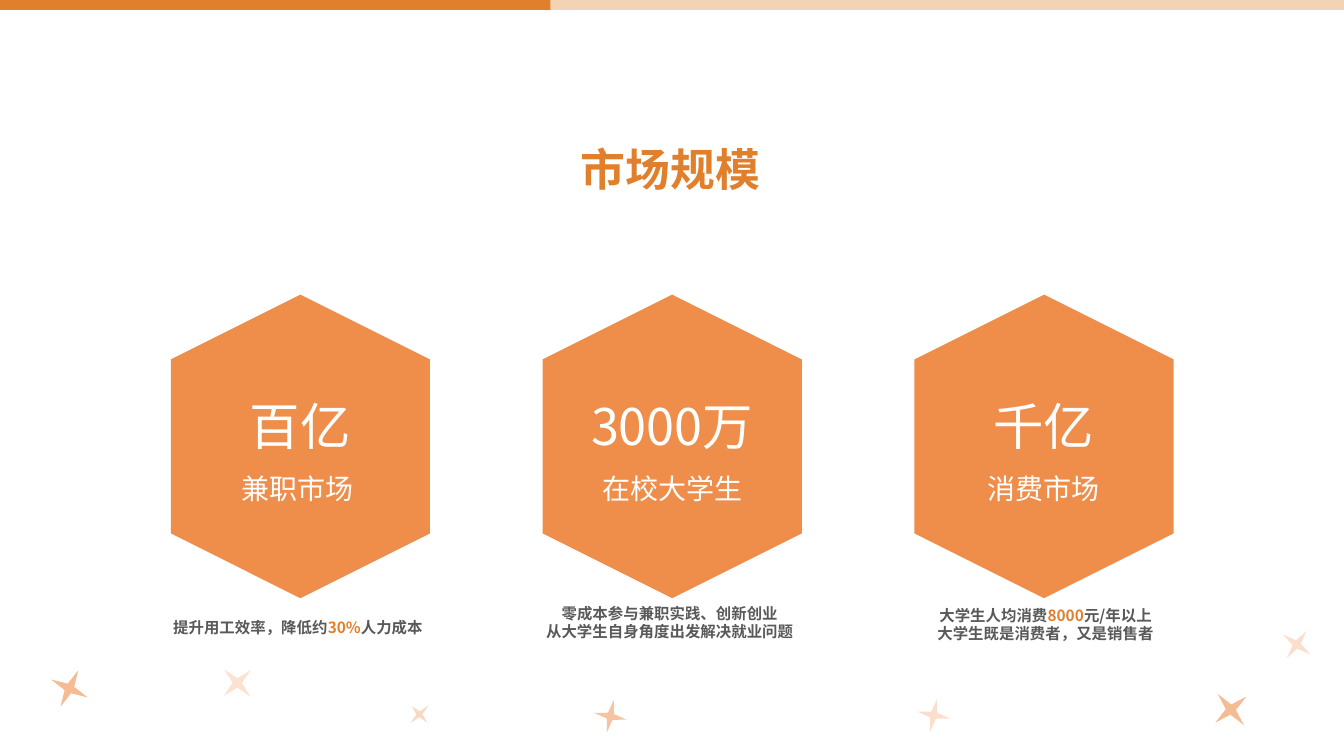
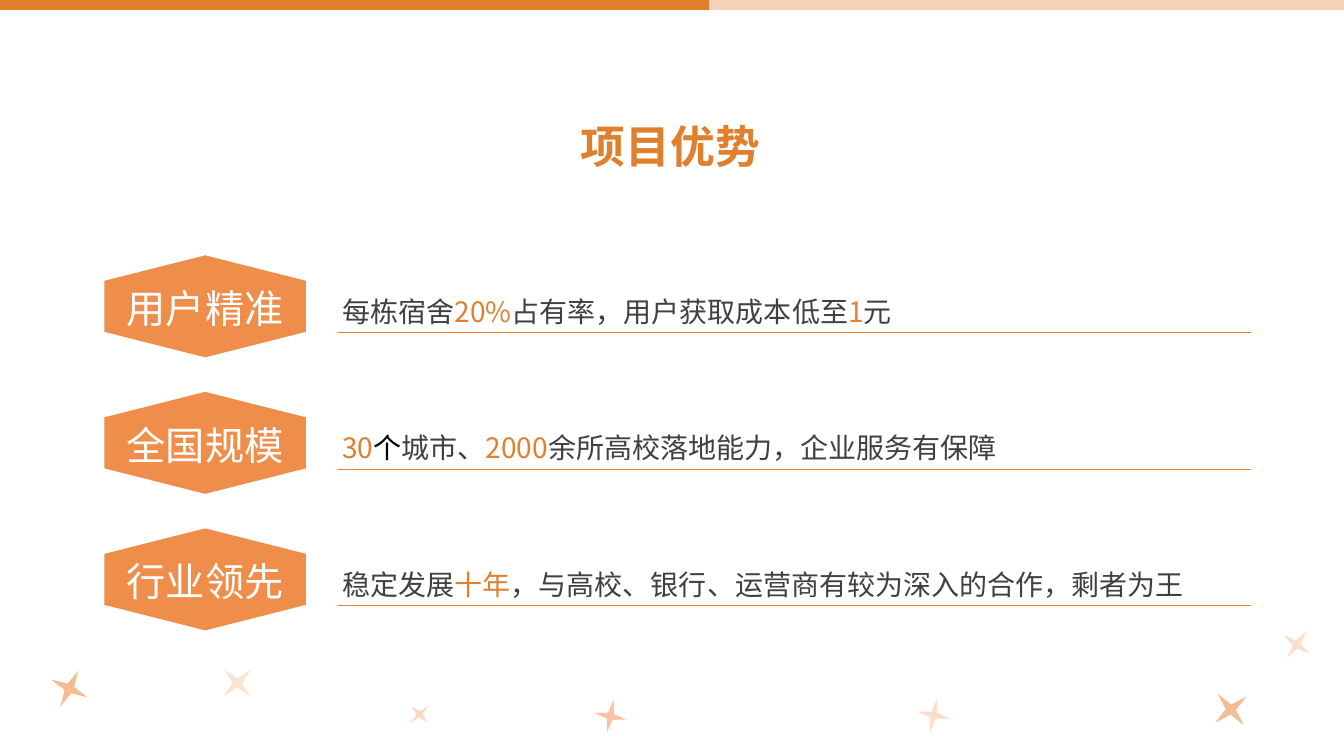
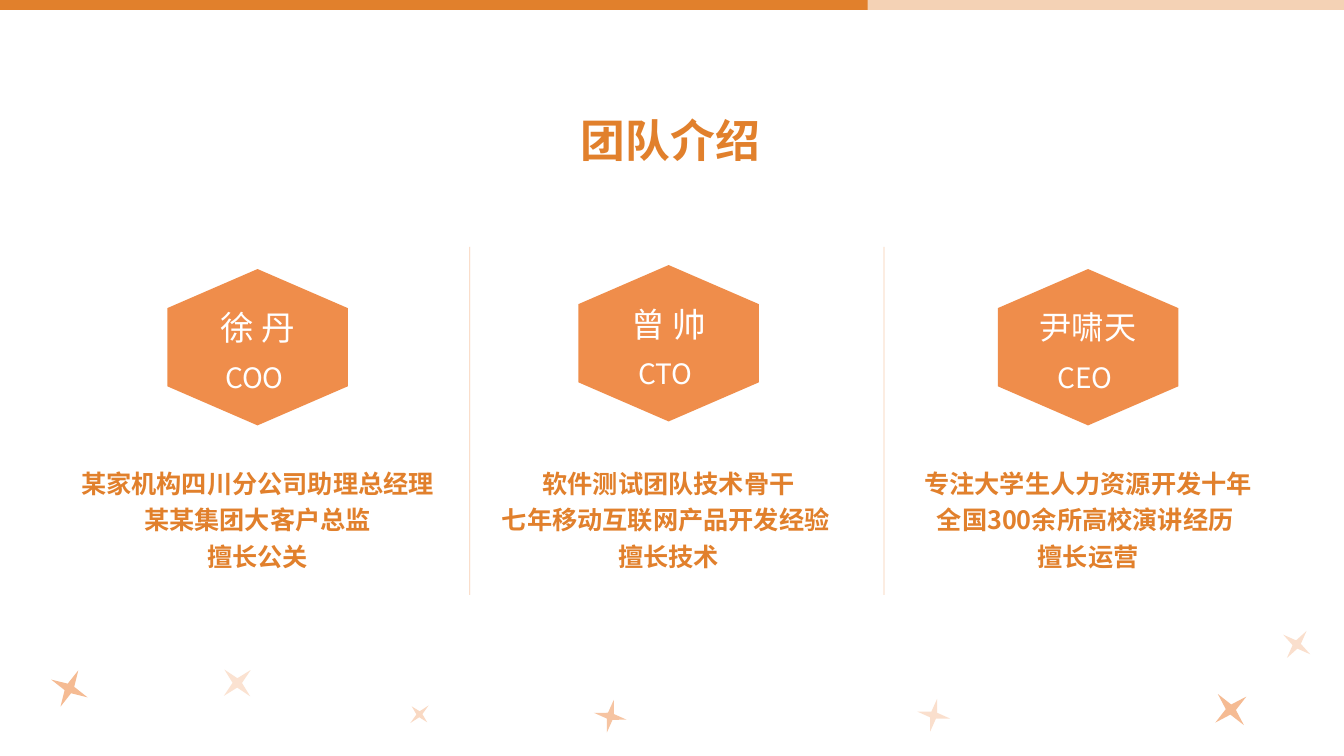
from dataclasses import dataclass
from lxml.etree import SubElement
from pptx import Presentation
from pptx.dml.color import RGBColor as RGB
from pptx.enum.shapes import MSO_CONNECTOR as LINK, MSO_SHAPE as KIND
from pptx.enum.text import MSO_ANCHOR as ANCHOR, MSO_AUTO_SIZE as FIT, PP_ALIGN as ALIGN
from pptx.oxml.ns import qn
from pptx.util import Cm, Pt


@dataclass(frozen=True)
class Theme:
    font: str = "Noto Sans CJK SC"
    main: str = "E1802C"
    warm: str = "ED7D31"
    white: str = "FFFFFF"
    black: str = "000000"
    dark: str = "404040"
    gray: str = "595959"
    title: int = 32
    huge: int = 36
    tag: int = 28
    name: int = 24
    text: int = 20
    bio: int = 18
    note: int = 11


T = Theme()
WIDE, HIGH, BAR = 33.87, 19.05, 0.25

# Content: a run is plain text, or a pair of text and colour.
# Title, top of title
HEADS = [("市场规模", 3.45), ("项目优势", 2.87), ("团队介绍", 2.72)]

# Figure, label, note centre, note top, note lines
SIZES = [
    ("百亿", "兼职市场 ", 7.51, 15.44,
     [["提升用工效率，降低约", ("30%", T.main), "人力成本"]]),
    ("3000万", "在校大学生", 16.88, 15.09,
     [["零成本参与兼职实践、创新创业"], ["从大学生自身角度出发解决就业问题"]]),
    ("千亿", "消费市场", 26.35, 15.14,
     [["大学生人均消费", ("8000", T.main), "元/年以上"],
      ["大学生既是消费者，又是销售者"]]),
]

# Tag, runs of the claim
CLAIMS = [
    ("用户精准", ["每栋宿舍", ("20%", T.main), "占有率，用户获取成本低至",
              ("1", T.warm), "元"]),
    ("全国规模", [("30", T.main), ("个", T.black), "城市、", ("2000", T.main),
              "余所高校落地能力，企业服务有保障"]),
    ("行业领先", ["稳定发展", ("十年", T.main),
              "，与高校、银行、运营商有较为深入的合作，剩者为王"]),
]

# Name, name size, role, centre x, centre y, lines of the bio
TEAM = [
    ("徐 丹", T.name, "COO ", 6.49, 8.75,
     ["某家机构四川分公司助理总经理", "某某集团大客户总监", "擅长公关"]),
    ("曾 帅", T.name, "CTO ", 16.85, 8.65,
     ["软件测试团队技术骨干", "七年移动互联网产品开发经验 ", "擅长技术"]),
    ("尹啸天", T.name - 1, "CEO ", 27.42, 8.75,
     ["专注大学生人力资源开发十年", "全国300余所高校演讲经历 ", "擅长运营"]),
]

# Left, top, width, height, turn, opacity
STARS = [
    (1.24, 16.84, 1.02, 1.02, 26, 52),
    (5.51, 16.74, 0.94, 0.94, 46, 22),
    (10.29, 17.68, 0.56, 0.64, 46, 29),
    (14.96, 17.63, 0.84, 0.84, 12, 45),
    (23.11, 17.6, 0.84, 0.84, 12, 24),
    (32.26, 15.82, 0.84, 0.84, 306, 24),
    (30.51, 17.37, 1.02, 1.02, 320, 52),
]


# Drawing helpers
def fade(item, part):
    for tint in item.element.spPr.iter(qn("a:srgbClr")):
        SubElement(tint, qn("a:alpha"), val=str(part * 1000))


def shape(page, kind, x, y, w, h, color, part=100, turn=0):
    item = page.shapes.add_shape(kind, Cm(x), Cm(y), Cm(w), Cm(h))
    item.shadow.inherit = False
    item.fill.solid()
    item.fill.fore_color.rgb = RGB.from_string(color)
    item.line.fill.background()
    item.rotation = turn
    if part < 100:
        fade(item, part)
    return item


def hexa(page, mid, y, w, h):
    """Point-up hexagon around a centre."""
    shape(page, KIND.HEXAGON, mid - h / 2, y - w / 2, h, w, T.warm, 87, 90)


def rule(page, x1, y1, x2, y2, part=100):
    item = page.shapes.add_connector(LINK.STRAIGHT, Cm(x1), Cm(y1), Cm(x2), Cm(y2))
    item.line.color.rgb = RGB.from_string(T.warm)
    item.line.width = Pt(0.5)
    SubElement(item.element.spPr, qn("a:effectLst"))
    if part < 100:
        fade(item, part)


def write(frame, lines, size, color, bold=False, align=ALIGN.CENTER,
          lead=1.0, anchor=ANCHOR.TOP):
    frame.word_wrap = True
    frame.auto_size = FIT.NONE
    frame.vertical_anchor = anchor
    for i, runs in enumerate(lines):
        para = frame.add_paragraph() if i else frame.paragraphs[0]
        para.alignment, para.line_spacing = align, lead
        for bit in runs:
            words, tint = (bit, color) if isinstance(bit, str) else bit
            run = para.add_run()
            run.text = words
            font = run.font
            font.size, font.bold = Pt(size), bold
            font.color.rgb = RGB.from_string(tint)
            font.name = T.font
            SubElement(run._r.get_or_add_rPr(), qn("a:ea"), typeface=T.font)


def label(page, x, y, w, h, lines, size, color, **style):
    box = page.shapes.add_textbox(Cm(x), Cm(y), Cm(w), Cm(h))
    write(box.text_frame, lines, size, color, **style)


def center(page, mid, y, w, h, words, size):
    label(page, mid - w / 2, y, w, h, [[words]], size, T.white, lead=1.1)


# Slide bodies
def market(page):
    for i, (figure, name, mid, top, lines) in enumerate(SIZES):
        x = 7.57 + 9.37 * i
        hexa(page, x, 11.25, 6.53, 7.65)
        center(page, x, 9.68, 5.3, 1.9, figure, T.huge)
        center(page, x, 11.68, 5.1, 1.19, name, T.text)
        note = shape(page, KIND.RECTANGLE, mid - 3.62, top, 7.24,
                     0.29 + 0.45 * len(lines), T.white)
        write(note.text_frame, lines, T.note, T.gray, bold=True)


def edge(page):
    for i, (tag, runs) in enumerate(CLAIMS):
        y = 7.72 + 3.44 * i
        hexa(page, 5.17, y, 5.08, 2.57)
        center(page, 5.17, y - 0.79, 5.7, 1.55, tag, T.tag)
        rule(page, 8.53, y + 0.66, 31.52, y + 0.66)
        label(page, 8.38, y - 0.68, 23.1, 1.37, [runs], T.text, T.dark,
              align=ALIGN.LEFT, lead=1.3)


def team(page):
    for name, size, role, x, y, lines in TEAM:
        hexa(page, x, y, 4.55, 3.94)
        center(page, x, y - 1.23, 3.6, 1.37, name, size)
        center(page, x, y + 0.13, 3.3, 1.19, role, T.text)
        label(page, x - 5.6, 11.53, 11.2, 3.02, [[line] for line in lines],
              T.bio, T.main, bold=True, lead=1.2)
    for x in (11.84, 22.28):
        rule(page, x, 6.22, x, 14.99, 39)


# Shared frame: title, progress bar, stars
def start(deck, step, head, top):
    page = deck.slides.add_slide(deck.slide_layouts[5])
    title = page.shapes.title
    title.left, title.top = Cm(14.38), Cm(top)
    title.width, title.height = Cm(5.13), Cm(1.78)
    write(title.text_frame, [[head]], T.title, T.main, bold=True,
          align=ALIGN.LEFT, lead=0.9, anchor=ANCHOR.MIDDLE)
    shape(page, KIND.RECTANGLE, 0, 0, WIDE, BAR, T.main, 35)
    shape(page, KIND.RECTANGLE, 0, 0, 13.87 + 4 * step, BAR, T.main)
    for x, y, w, h, turn, part in STARS:
        shape(page, KIND.STAR_4_POINT, x, y, w, h, T.warm, part, turn)
    return page


def main():
    deck = Presentation()
    deck.slide_width, deck.slide_height = Cm(WIDE), Cm(HIGH)
    for step, ((head, top), body) in enumerate(zip(HEADS, (market, edge, team))):
        body(start(deck, step, head, top))
    deck.save("out.pptx")


if __name__ == "__main__":
    main()
